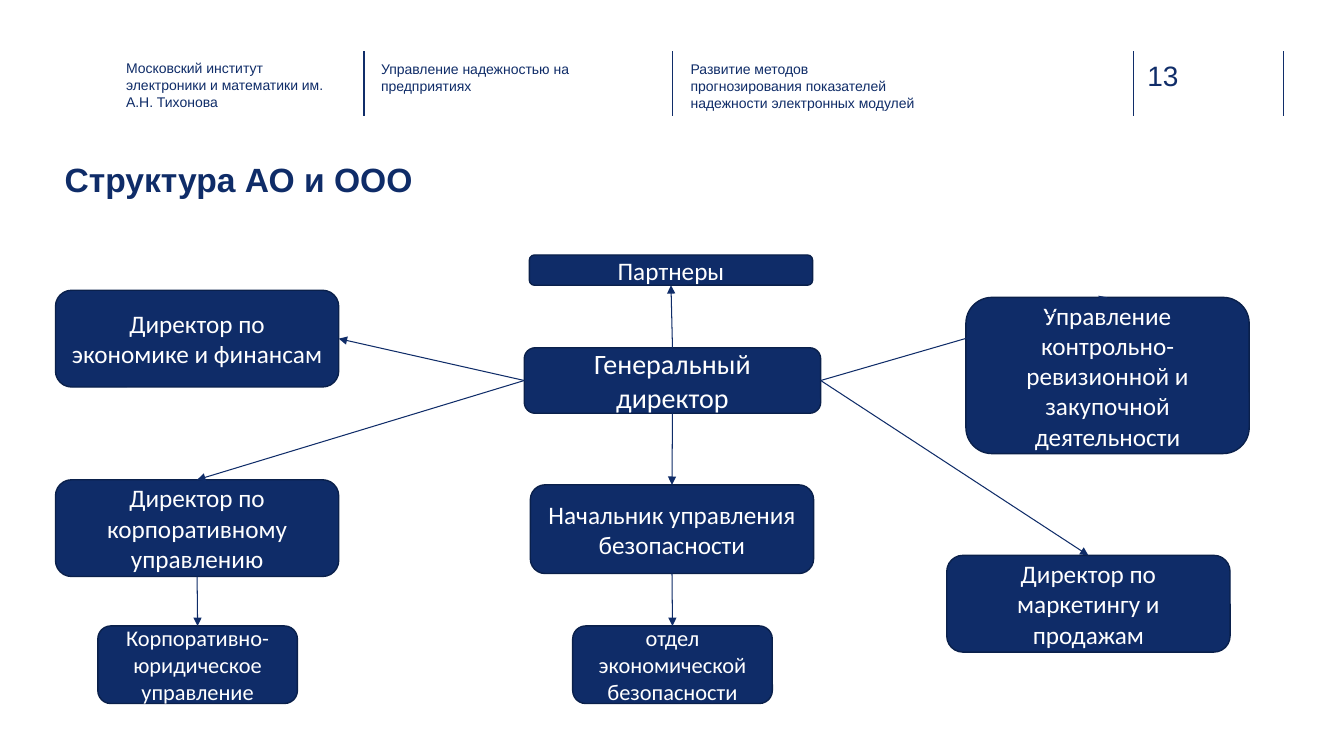
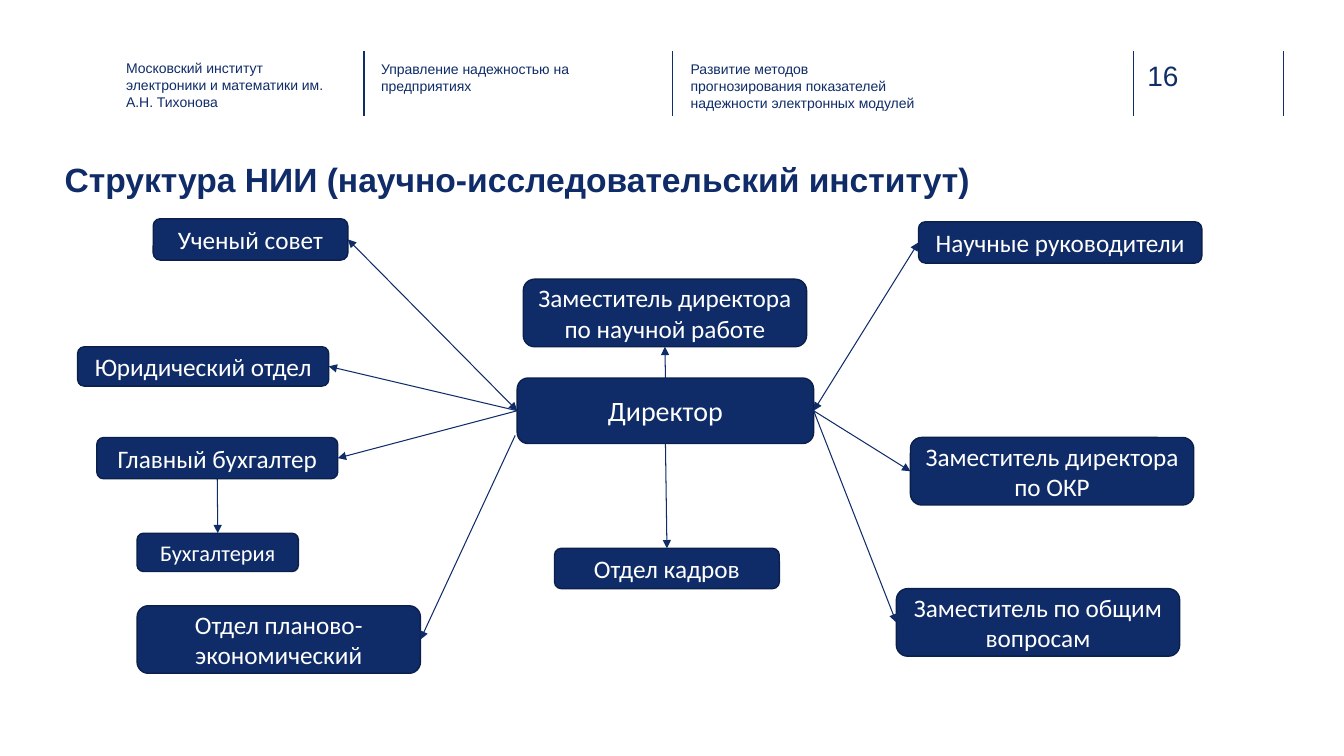
from dataclasses import dataclass

from lxml.etree import SubElement
from pptx import Presentation
from pptx.dml.color import RGBColor as Color
from pptx.enum.shapes import MSO_CONNECTOR as Wire, MSO_SHAPE as Form
from pptx.enum.text import MSO_ANCHOR as Anchor, MSO_AUTO_SIZE as Fit, PP_ALIGN as Align
from pptx.oxml.ns import qn
from pptx.util import Inches, Pt


@dataclass(frozen=True)
class Theme:
    navy: str = "0F2C68"
    edge: str = "0A204B"
    rule: str = "102D69"
    white: str = "FFFFFF"
    sans: str = "Arial"
    body: str = "Calibri"
    title: int = 24
    page: int = 20
    head: int = 10
    chief: int = 20
    unit: int = 18
    sub: int = 16
    thin: float = 0.75
    line: float = 1


T = Theme()

# Header shared by the slides: text, left, top, width
HEADS = [
    ("Московский институт электроники и математики им. А.Н. Тихонова", 1.25, 0.59, 2.08),
    ("Управление надежностью на предприятиях", 3.78, 0.6, 2.26),
    ("Развитие методов прогнозирования показателей надежности электронных модулей",
     6.85, 0.6, 2.26),
]
RULES = [3.61, 6.67, 11.24, 12.73]

# Connection sites of a box
TOP, LEFT, BASE, RIGHT = range(4)
ONE, BOTH = ("tailEnd",), ("headEnd", "tailEnd")

# Boxes: key -> text, left, top, width, height, type size
# Links: start key, start site, end key, end site, arrowheads
SLIDES = [
    {
        "page": "13",
        "title": "Структура АО и ООО",
        "boxes": {
            "chief": ("Генеральный директор", 5.2, 3.45, 2.94, 0.65, T.chief),
            "guard": ("Начальник управления безопасности", 5.26, 4.81, 2.81, 0.88, T.unit),
            "audit": ("Управление контрольно-ревизионной и закупочной деятельности",
                      9.58, 2.95, 2.81, 1.55, T.unit),
            "money": ("Директор по экономике и финансам", 0.55, 2.88, 2.81, 0.96, T.unit),
            "corp": ("Директор по корпоративному управлению", 0.55, 4.76, 2.81, 0.96, T.unit),
            "sales": ("Директор по маркетингу и продажам", 9.39, 5.51, 2.81, 0.96, T.unit),
            "allies": ("Партнеры", 5.25, 2.53, 2.81, 0.3, T.unit),
            "risk": ("отдел экономической безопасности", 5.68, 6.21, 1.98, 0.77, T.sub),
            "legal": ("Корпоративно-юридическое управление", 0.97, 6.21, 1.98, 0.77, T.sub),
        },
        "links": [
            ("chief", LEFT, "money", RIGHT, ONE),
            ("chief", BASE, "guard", TOP, ONE),
            ("chief", RIGHT, "audit", TOP, ONE),
            ("chief", LEFT, "corp", TOP, ONE),
            ("chief", RIGHT, "sales", TOP, ONE),
            ("chief", TOP, "allies", BASE, ONE),
            ("guard", BASE, "risk", TOP, ONE),
            ("corp", BASE, "legal", TOP, ONE),
        ],
    },
    {
        "page": "16",
        "title": "Структура НИИ (научно-исследовательский институт)",
        "boxes": {
            "chief": ("Директор", 5.13, 3.75, 2.94, 0.65, T.chief),
            "legal": ("Юридический отдел", 0.77, 3.44, 2.49, 0.39, T.unit),
            "leads": ("Научные руководители", 9.11, 2.2, 2.81, 0.41, T.unit),
            "board": ("Ученый совет", 1.52, 2.17, 1.93, 0.41, T.unit),
            "books": ("Главный бухгалтер", 0.96, 4.34, 2.39, 0.41, T.unit),
            "staff": ("Отдел кадров", 5.5, 5.44, 2.23, 0.4, T.unit),
            "design": ("Заместитель директора по ОКР", 9.03, 4.34, 2.81, 0.67, T.unit),
            "clerks": ("Бухгалтерия", 1.36, 5.29, 1.6, 0.38, T.sub),
            "plan": ("Отдел планово-экономический", 1.36, 6.01, 2.81, 0.67, T.unit),
            "study": ("Заместитель директора по научной работе",
                      5.19, 2.77, 2.81, 0.67, T.unit),
            "common": ("Заместитель по общим вопросам", 8.89, 5.84, 2.81, 0.67, T.unit),
        },
        "links": [
            ("board", RIGHT, "chief", LEFT, BOTH),
            ("chief", RIGHT, "leads", LEFT, BOTH),
            ("chief", LEFT, "books", RIGHT, ONE),
            ("chief", LEFT, "legal", RIGHT, ONE),
            ("chief", BASE, "staff", TOP, ONE),
            ("books", BASE, "clerks", TOP, ONE),
            ((5.11, 4.32), None, "plan", RIGHT, ONE),  # starts low on the chief's side
            ("chief", RIGHT, "design", LEFT, ONE),
            ("chief", RIGHT, "common", LEFT, ONE),
            ("chief", TOP, "study", BASE, ONE),
        ],
    },
]


def place(shape, *spot):
    shape.left, shape.top, shape.width, shape.height = map(Inches, spot)


def write(shape, text, size, color, font, bold=False, align=Align.LEFT,
          anchor=Anchor.TOP, pad=(0, 0)):
    frame = shape.text_frame
    frame.word_wrap = True
    frame.auto_size = Fit.NONE
    frame.vertical_anchor = anchor
    frame.margin_left = frame.margin_right = Inches(pad[0])
    frame.margin_top = frame.margin_bottom = Inches(pad[1])
    para = frame.paragraphs[0]
    para.alignment = align
    run = para.add_run()
    run.text = text
    run.font.name, run.font.size, run.font.bold = font, Pt(size), bold
    run.font.color.rgb = Color.from_string(color)


def draw_line(slide, start, end, color, width):
    line = slide.shapes.add_connector(Wire.STRAIGHT, *map(Inches, start + end))
    line.line.color.rgb = Color.from_string(color)
    line.line.width = Pt(width)
    SubElement(line._element.spPr, qn("a:effectLst"))
    return line


def add_note(slide, text, spot, size, color):
    write(slide.shapes.add_textbox(*map(Inches, spot)), text, size, color, T.sans)


def add_frame(slide, title, page):
    # Header rules, page number, title and header texts
    for x in RULES:
        draw_line(slide, (x, 0.51), (x, 1.15), T.rule, T.line)
    add_note(slide, page, (11.38, 0.58, 0.73, 0.34), T.page, T.rule)
    place(slide.shapes.title, 0.64, 1.58, 11.94, 0.77)
    write(slide.shapes.title, title, T.title, T.navy, T.sans, bold=True)
    for text, x, y, wide in HEADS:
        add_note(slide, text, (x, y, wide, 0.45), T.head, T.navy)


def add_box(slide, text, x, y, wide, high, size):
    box = slide.shapes.add_shape(Form.ROUNDED_RECTANGLE, *map(Inches, (x, y, wide, high)))
    box.shadow.inherit = False
    box.fill.solid()
    box.fill.fore_color.rgb = Color.from_string(T.navy)
    box.line.color.rgb = Color.from_string(T.edge)
    box.line.width = Pt(T.line)
    write(box, text, size, T.white, T.body, align=Align.CENTER,
          anchor=Anchor.MIDDLE, pad=(0.1, 0.05))
    return box


def add_link(slide, boxes, start, out, end, into, heads):
    free = out is None
    line = draw_line(slide, start if free else (0, 0), (0, 0), T.navy, T.thin)
    if not free:
        line.begin_connect(boxes[start], out)
    line.end_connect(boxes[end], into)
    for head in heads:
        SubElement(line.line._get_or_add_ln(), qn("a:" + head), type="triangle")


def main():
    deck = Presentation()
    deck.slide_width, deck.slide_height = Inches(13.33), Inches(7.5)
    layout = deck.slide_layouts.get_by_name("Title Only")
    for data in SLIDES:
        slide = deck.slides.add_slide(layout)
        add_frame(slide, data["title"], data["page"])
        boxes = {key: add_box(slide, *box) for key, box in data["boxes"].items()}
        for link in data["links"]:
            add_link(slide, boxes, *link)
    deck.save("out.pptx")


if __name__ == "__main__":
    main()
